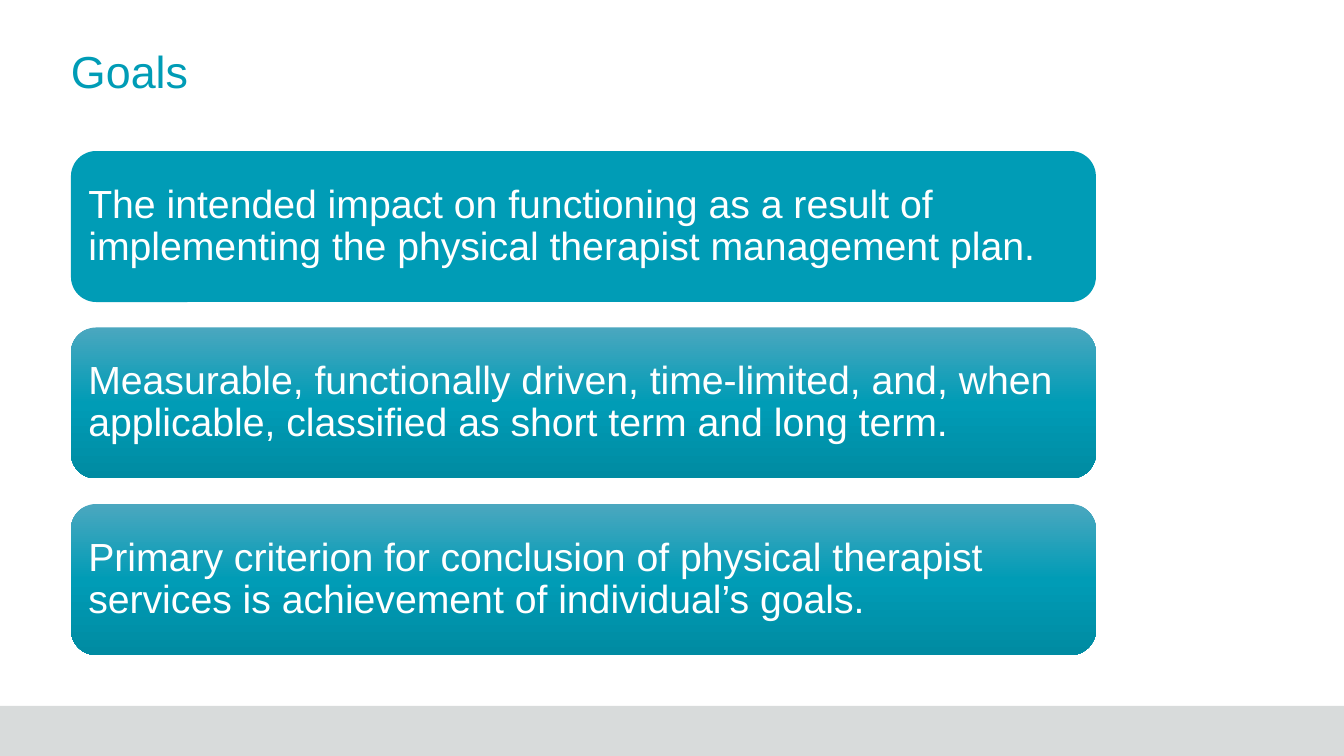
import copy

import pptx
import pptx.dml.color
import pptx.enum.shapes
import pptx.enum.text
import pptx.oxml.ns
import pptx.util

RGBColor = pptx.dml.color.RGBColor
MSO_SHAPE = pptx.enum.shapes.MSO_SHAPE
MSO_ANCHOR = pptx.enum.text.MSO_ANCHOR
PP_ALIGN = pptx.enum.text.PP_ALIGN

TEAL = RGBColor(0x00, 0x9C, 0xB6)
LIGHT_TEAL = RGBColor(0x4B, 0xA7, 0xBF)
DARK_TEAL = RGBColor(0x00, 0x8B, 0xA2)
GRAY = RGBColor(0xD8, 0xDB, 0xDB)
WHITE = RGBColor(0xFF, 0xFF, 0xFF)

TITLE = "Goals"
SHADED = [(0, LIGHT_TEAL), (0.5, TEAL), (1, DARK_TEAL)]
GOALS = [
    ("The intended impact on functioning as a result of implementing "
     "the physical therapist management plan.", None),
    ("Measurable, functionally driven, time-limited, and, when applicable, "
     "classified as short term and long term.", SHADED),
    ("Primary criterion for conclusion of physical therapist services "
     "is achievement of individual’s goals.", SHADED),
]

FONT = "Arial"
SLIDE_W, SLIDE_H = 1344, 756
FOOTER_H = 50
LEFT = 71
TITLE_TOP, TITLE_W, TITLE_H = 50, 1109, 101
CARD_TOP, CARD_W, CARD_H, CARD_GAP = 151, 1025, 151, 25.5
CARD_INSET = 10


def px(n):
    return pptx.util.Emu(round(n * 914400 / 100.8))


def add_block(slide, kind, x, y, w, h, color):
    s = slide.shapes.add_shape(kind, px(x), px(y), px(w), px(h))
    s.shadow.inherit = False
    s.fill.solid()
    s.fill.fore_color.rgb = color
    s.line.fill.background()
    return s


def shade(s, stops):
    s.fill.gradient()
    s.fill.gradient_angle = 270
    gs_list = s._element.spPr.find(".//" + pptx.oxml.ns.qn("a:gsLst"))
    gs_list.append(copy.deepcopy(gs_list[-1]))
    for stop, (position, color) in zip(s.fill.gradient_stops, stops):
        stop.position = position
        stop.color.rgb = color


def write(s, text, size, color, anchor, inset):
    tf = s.text_frame
    tf.word_wrap = True
    tf.auto_size = pptx.enum.text.MSO_AUTO_SIZE.NONE
    tf.vertical_anchor = anchor
    tf.margin_left = tf.margin_right = tf.margin_top = tf.margin_bottom = px(inset)
    p = tf.paragraphs[0]
    p.alignment = PP_ALIGN.LEFT
    p.line_spacing = 0.9
    r = p.add_run()
    r.text = text
    r.font.name = FONT
    r.font.size = pptx.util.Pt(size)
    r.font.color.rgb = color


prs = pptx.Presentation()
prs.slide_width, prs.slide_height = px(SLIDE_W), px(SLIDE_H)
slide = prs.slides.add_slide(prs.slide_layouts[5])

add_block(slide, MSO_SHAPE.RECTANGLE, 0, SLIDE_H - FOOTER_H, SLIDE_W, FOOTER_H, GRAY)

title = slide.shapes.title
title.left, title.top = px(LEFT), px(TITLE_TOP)
title.width, title.height = px(TITLE_W), px(TITLE_H)
write(title, TITLE, 32, TEAL, MSO_ANCHOR.TOP, 0)

for i, (text, stops) in enumerate(GOALS):
    y = CARD_TOP + i * (CARD_H + CARD_GAP)
    card = add_block(slide, MSO_SHAPE.ROUNDED_RECTANGLE, LEFT, y, CARD_W, CARD_H, TEAL)
    if stops:
        shade(card, stops)
    write(card, text, 28, WHITE, MSO_ANCHOR.MIDDLE, CARD_INSET)

prs.save("out.pptx")
